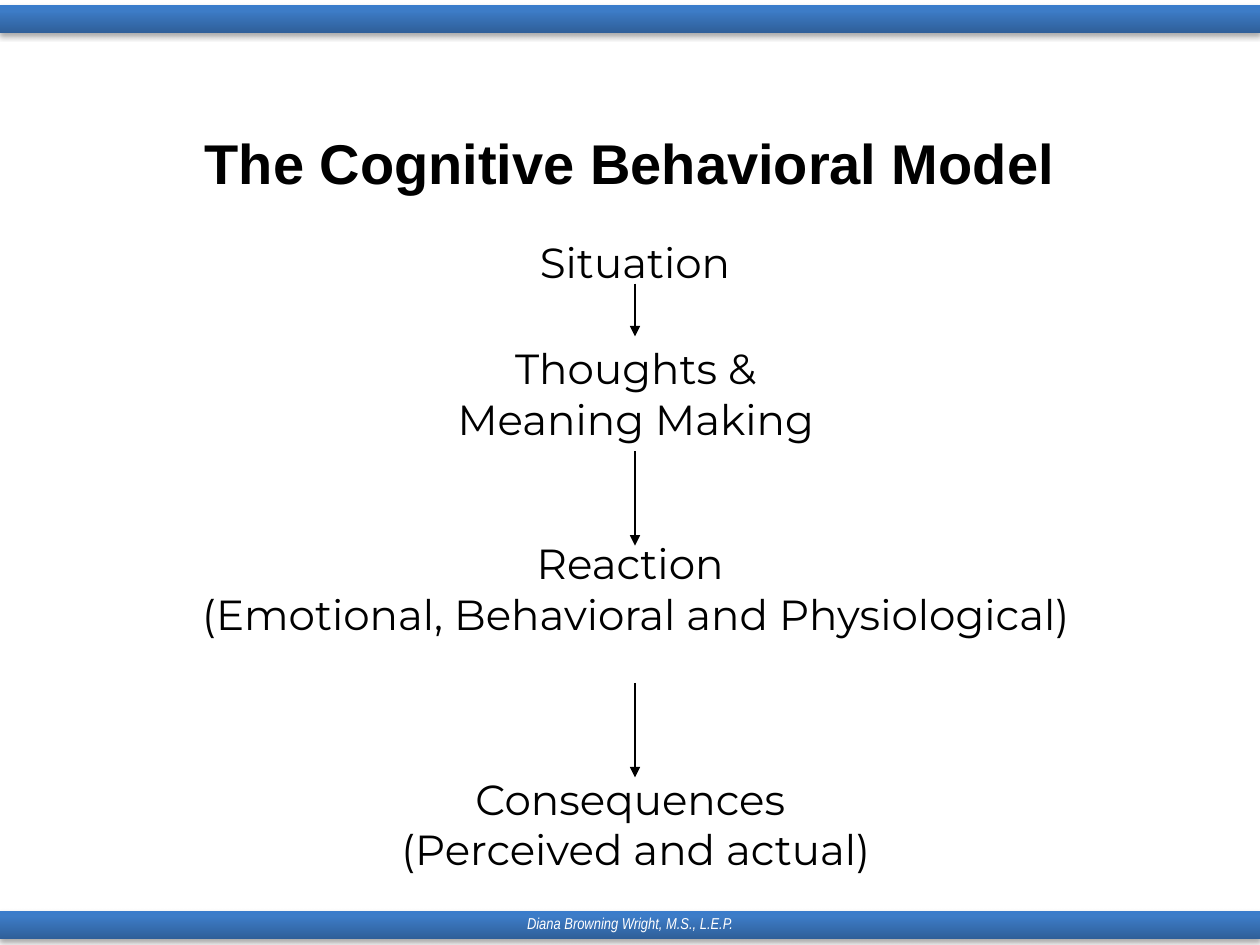
import pptx
import pptx.util
import pptx.dml.color
import pptx.enum.shapes
import pptx.enum.text
import pptx.oxml
import pptx.oxml.ns
from pptx.util import Inches

THEME = {
    "ink": "000000",
    "footer_ink": "FFFFFF",
    "band": [(0, "2F5F99"), (80, "3D7CC7"), (100, "3A7CCB")],
    "title": ("Arial", 32),
    "stage": ("Montserrat", 24),
    "footer": ("Arial Narrow", 9),
    "arrow_width": 0.75,
}


def add_xml(parent, xml):
    declaration = pptx.oxml.ns.nsdecls("a")
    parent.append(pptx.oxml.parse_xml(xml.replace(">", f" {declaration}>", 1)))


def add_text(box, lines, role, ink, anchor=pptx.enum.text.MSO_ANCHOR.TOP, wrap=True):
    left, top, width, height = map(Inches, box)
    frame = slide.shapes.add_textbox(left, top, width, height).text_frame
    frame.word_wrap = wrap
    frame.vertical_anchor = anchor
    frame.text = "\n".join(lines)
    for paragraph in frame.paragraphs:
        paragraph.alignment = pptx.enum.text.PP_ALIGN.CENTER
        name, size = THEME[role]
        paragraph.font.name = name
        paragraph.font.size = pptx.util.Pt(size)
        paragraph.font.color.rgb = pptx.dml.color.RGBColor.from_string(ink)
    return frame


deck = pptx.Presentation()
deck.slide_width, deck.slide_height = Inches(10), Inches(7.5)
slide = deck.slides.add_slide(deck.slide_layouts[6])

stops = "".join(
    f'<a:gs pos="{position * 1000}"><a:srgbClr val="{color}"/></a:gs>'
    for position, color in THEME["band"]
)
for band_top in (7.23, 0.04):
    band = slide.shapes.add_shape(
        pptx.enum.shapes.MSO_SHAPE.RECTANGLE,
        Inches(0), Inches(band_top), Inches(10), Inches(0.22),
    )
    add_xml(
        band._element.spPr,
        f'<a:gradFill rotWithShape="1"><a:gsLst>{stops}</a:gsLst>'
        '<a:lin ang="16200000" scaled="0"/></a:gradFill>',
    )
    band.line.fill.background()
    add_xml(
        band._element.spPr,
        '<a:effectLst><a:outerShdw blurRad="39370" dist="22860" dir="5400000" '
        'rotWithShape="0"><a:srgbClr val="000000"><a:alpha val="35000"/>'
        "</a:srgbClr></a:outerShdw></a:effectLst>",
    )

middle = pptx.enum.text.MSO_ANCHOR.MIDDLE
title = add_text(
    (0.5, 0.92, 9, 0.83), ["The Cognitive Behavioral Model"], "title", THEME["ink"], middle
).paragraphs[0]
title.font.bold = True
title.line_spacing = 0.8

stages = [
    ((4.08, 1.83, 1.92, 0.51), ["Situation"], True),
    ((3.45, 2.67, 3.19, 0.91), ["Thoughts &", "Meaning Making"], False),
    ((1.42, 4.22, 7.25, 1.31), ["Reaction ", "(Emotional, Behavioral and Physiological)"], True),
    ((1.42, 6.09, 7.25, 0.91), ["Consequences ", "(Perceived and actual)"], True),
]
for box, lines, wrap in stages:
    add_text(box, lines, "stage", THEME["ink"], wrap=wrap)

flow_x = Inches(5.04)
for start, end in [(2.25, 2.67), (3.58, 4.33), (5.42, 6.17)]:
    arrow = slide.shapes.add_connector(
        pptx.enum.shapes.MSO_CONNECTOR.STRAIGHT, flow_x, Inches(start), flow_x, Inches(end)
    )
    arrow.line.color.rgb = pptx.dml.color.RGBColor.from_string(THEME["ink"])
    arrow.line.width = pptx.util.Pt(THEME["arrow_width"])
    add_xml(arrow.line._get_or_add_ln(), '<a:tailEnd type="triangle"></a:tailEnd>')
    add_xml(arrow._element.spPr, "<a:effectLst></a:effectLst>")

footer = add_text(
    (3.31, 7.13, 3.38, 0.4),
    ["Diana Browning Wright, M.S., L.E.P."],
    "footer",
    THEME["footer_ink"],
    middle,
).paragraphs[0]
footer.font.italic = True

deck.save("out.pptx")
